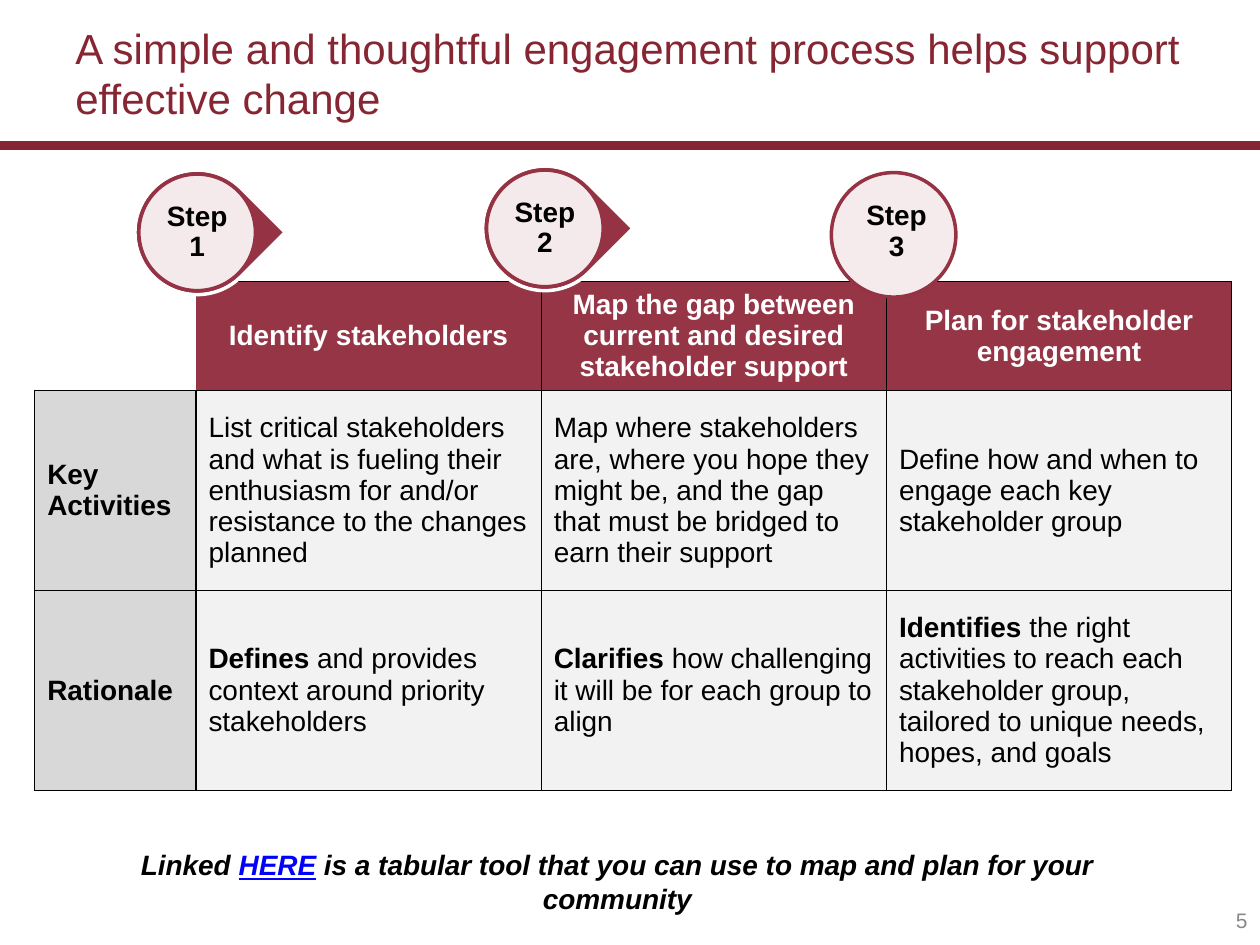
from dataclasses import dataclass
from typing import Any

from lxml.etree import SubElement
from pptx import Presentation
from pptx.dml.color import RGBColor
from pptx.enum.shapes import MSO_CONNECTOR, MSO_SHAPE
from pptx.enum.text import MSO_ANCHOR, PP_ALIGN
from pptx.oxml.ns import qn
from pptx.util import Cm, Pt

MAROON = "862633"
STEP_RED = "953243"
HEADER_RED = "953545"
BLUSH = "F5EBED"
WHITE = "FFFFFF"
BLACK = "000000"
BODY = {"name": "Arial", "size": Pt(16)}
BOLD = BODY | {"bold": True}
NOTE = BOLD | {"italic": True}
MARGINS = ("margin_left", "margin_top", "margin_right", "margin_bottom")


@dataclass
class Run:
    text: str
    style: dict[str, Any]
    color: str = BLACK


@dataclass
class Box:
    left: float
    top: float
    width: float
    height: float

    def lengths(self) -> tuple:
        return Cm(self.left), Cm(self.top), Cm(self.width), Cm(self.height)

    def inset(self, gap: float) -> "Box":
        return Box(self.left + gap, self.top + gap, self.width - 2 * gap, self.height - 2 * gap)


@dataclass
class Step:
    text: str
    circle: Box
    label: Box
    fill: str
    opacity: int = 100
    pointer: Box | None = None


def set_attributes(target: Any, values: dict[str, Any]) -> None:
    for name, value in values.items():
        setattr(target, name, value)


def paint(color_format: Any, color: str) -> None:
    color_format.rgb = RGBColor.from_string(color)


def fill_solid(target: Any, color: str) -> None:
    target.fill.solid()
    paint(target.fill.fore_color, color)


def write_runs(text_frame: Any, runs: list[Run], paragraph_format: dict[str, Any]) -> None:
    paragraph = text_frame.paragraphs[0]
    set_attributes(paragraph, paragraph_format)
    for item in runs:
        run = paragraph.add_run()
        run.text = item.text
        set_attributes(run.font, item.style)
        paint(run.font.color, item.color)


def add_text(shapes: Any, box: Box, runs: list[Run], frame_format: dict[str, Any],
             paragraph_format: dict[str, Any]) -> Any:
    shape = shapes.add_textbox(*box.lengths())
    set_attributes(shape.text_frame, {"word_wrap": True} | frame_format)
    write_runs(shape.text_frame, runs, paragraph_format)
    return shape


def add_outline(shapes: Any, kind: Any, box: Box, fill: str, line: str) -> Any:
    shape = shapes.add_shape(kind, *box.lengths())
    shape.shadow.inherit = False
    fill_solid(shape, fill)
    paint(shape.line.color, line)
    shape.line.width = Pt(2)
    return shape


def add_step(slide: Any, step: Step) -> None:
    shapes = slide.shapes.add_group_shape().shapes
    if step.pointer:
        pointer = add_outline(shapes, MSO_SHAPE.TEAR, step.pointer, STEP_RED, WHITE)
        pointer.adjustments[0] = 1.0
        pointer.rotation = 45
    circle = add_outline(shapes, MSO_SHAPE.OVAL, step.circle, step.fill, STEP_RED)
    if step.opacity < 100:
        color = circle.fill._xPr.find(qn("a:solidFill"))[0]
        SubElement(color, qn("a:alpha")).set("val", str(step.opacity * 1000))
    frame_format = {"vertical_anchor": MSO_ANCHOR.MIDDLE} | dict.fromkeys(MARGINS, Cm(0.03))
    label = add_text(shapes, step.label, [Run(step.text, BOLD)], frame_format,
                     {"alignment": PP_ALIGN.CENTER, "line_spacing": 0.9})
    if not step.pointer:
        fill_solid(label, step.fill)


def pointed_step(text: str, left: float, top: float) -> Step:
    pointer = Box(left, top, 2.51, 2.51)
    return Step(text, pointer.inset(0.08), pointer.inset(0.41), WHITE, 90, pointer)


def set_borders(cell: Any, widths: dict[str, float]) -> None:
    properties = cell._tc.get_or_add_tcPr()
    for position, (side, width) in enumerate(widths.items()):
        border = properties.makeelement(qn(f"a:ln{side}"), {"w": str(Pt(width))})
        if width:
            fill = SubElement(border, qn("a:solidFill"))
            SubElement(fill, qn("a:srgbClr")).set("val", BLACK)
        else:
            SubElement(border, qn("a:noFill"))
        properties.insert(position, border)


def add_process_table(slide: Any, rows: list[list[list[Run]]]) -> None:
    widths = [3.25] + [6.96] * 3
    heights = [2.18, 4.03, 4.03]
    box = Box(0.7, 5.68, sum(widths), sum(heights))
    table = slide.shapes.add_table(len(heights), len(widths), *box.lengths()).table
    set_attributes(table, {"first_row": False, "horz_banding": False})
    for column, width in zip(table.columns, widths):
        column.width = Cm(width)
    for row, height in zip(table.rows, heights):
        row.height = Cm(height)
    for row_index, row in enumerate(rows):
        for column_index, runs in enumerate(row):
            cell = table.cell(row_index, column_index)
            header = row_index == 0
            margin = Cm(0.08 if header else 0.13)
            set_attributes(cell, {"vertical_anchor": MSO_ANCHOR.MIDDLE,
                                  "margin_top": margin, "margin_bottom": margin})
            alignment = PP_ALIGN.CENTER if header else PP_ALIGN.LEFT
            borders = dict.fromkeys("LRTB", 0.75)
            if header and column_index == 0:
                cell.fill.background()
                borders = {"L": 0, "R": 0, "T": 0, "B": 1}
            else:
                body_fill = "F2F2F2" if column_index else "D8D8D8"
                fill_solid(cell, HEADER_RED if header else body_fill)
                if header and column_index == 1:
                    borders["L"] = 0
                write_runs(cell.text_frame, runs, {"alignment": alignment})
            set_borders(cell, borders)


def main() -> None:
    presentation = Presentation()
    set_attributes(presentation, {"slide_width": Cm(25.4), "slide_height": Cm(19.05)})
    slide = presentation.slides.add_slide(presentation.slide_layouts[6])
    middle = {"vertical_anchor": MSO_ANCHOR.MIDDLE}

    rule = slide.shapes.add_connector(MSO_CONNECTOR.STRAIGHT, Cm(0), Cm(2.94), Cm(25.4), Cm(2.94))
    paint(rule.line.color, MAROON)
    rule.line.width = Pt(5)
    SubElement(rule._element.spPr, qn("a:effectLst"))

    add_text(slide.shapes, Box(19.48, 18.03, 5.92, 1.02),
             [Run("5", BODY | {"size": Pt(12)}, "888888")], middle, {"alignment": PP_ALIGN.RIGHT})
    add_process_table(slide, [
        [[],
         [Run("Identify stakeholders", BOLD, WHITE)],
         [Run("Map the gap between current and desired stakeholder support", BOLD, WHITE)],
         [Run("Plan for stakeholder engagement", BOLD, WHITE)]],
        [[Run("Key Activities", BOLD)],
         [Run("List critical stakeholders and what is fueling their enthusiasm for and/or "
              "resistance to the changes planned", BODY)],
         [Run("Map where stakeholders are, where you hope they might be, and the gap that "
              "must be bridged to earn their support", BODY)],
         [Run("Define how and when to engage each key stakeholder group", BODY)]],
        [[Run("Rationale", BOLD)],
         [Run("Defines", BOLD), Run(" and provides context around priority stakeholders", BODY)],
         [Run("Clarifies", BOLD), Run(" how challenging it will be for each group to align", BODY)],
         [Run("Identifies ", BOLD),
          Run("the right activities to reach each stakeholder group, tailored to unique needs, "
              "hopes, and goals", BODY)]],
    ])
    add_text(slide.shapes, Box(1.27, 0, 22.86, 2.94),
             [Run("A simple and thoughtful engagement process helps support effective change",
                  BODY | {"size": Pt(24)}, MAROON)], middle, {"alignment": PP_ALIGN.LEFT})
    add_text(slide.shapes, Box(1.27, 16.97, 22.35, 1.63),
             [Run("Linked ", NOTE), Run("HERE", NOTE | {"underline": True}, "0000FF"),
              Run(" is a tabular tool that you can use to map and plan for your community", NOTE)],
             {}, {"alignment": PP_ALIGN.CENTER})
    for step in (
        pointed_step("Step 1", 2.72, 3.43),
        pointed_step("Step 2", 9.73, 3.35),
        Step("Step 3", Box(16.76, 3.48, 2.51, 2.51), Box(17.25, 3.89, 1.65, 1.57), BLUSH),
    ):
        add_step(slide, step)
    presentation.save("out.pptx")


if __name__ == "__main__":
    main()
